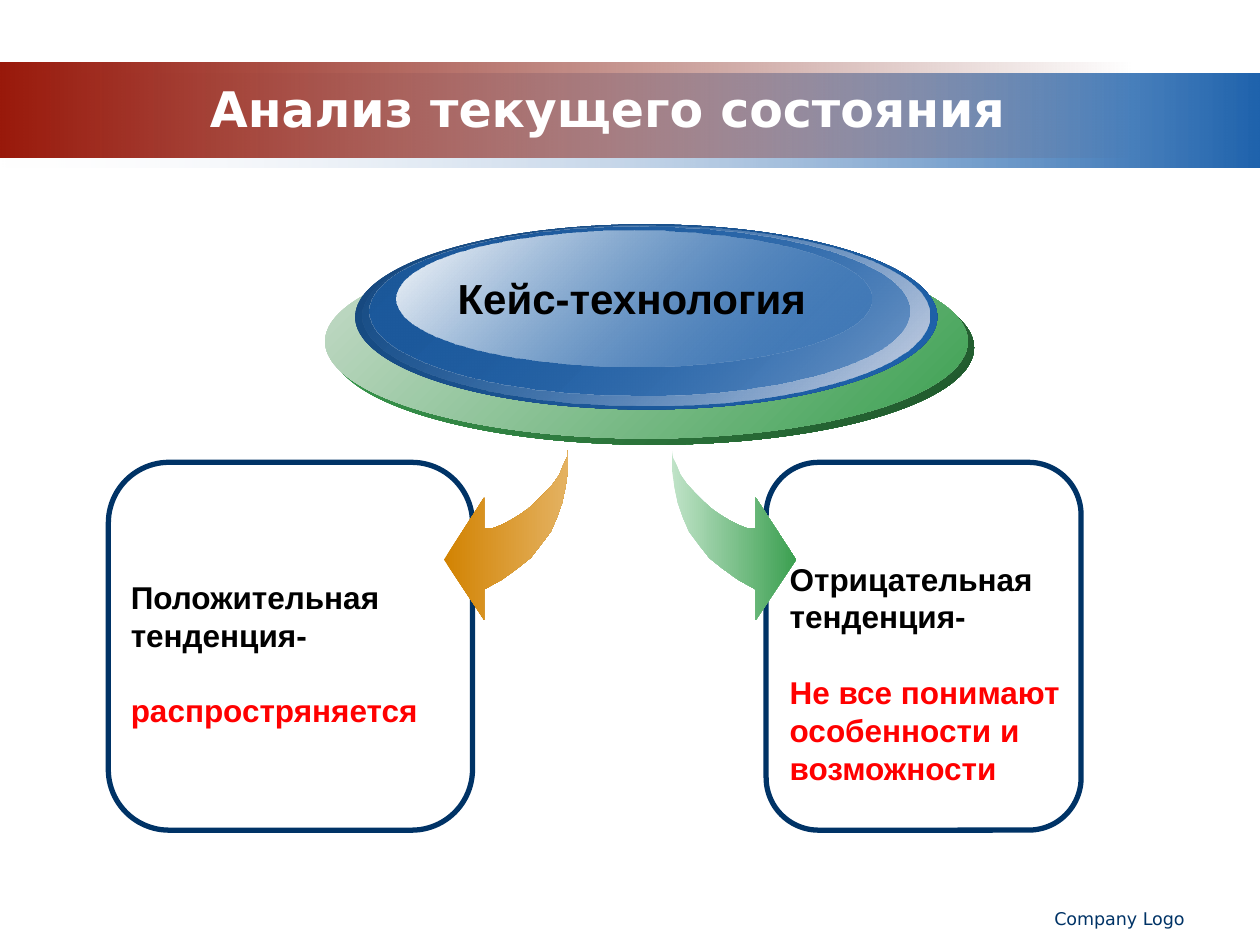
from lxml import etree
from pptx import Presentation
from pptx.dml.color import RGBColor
from pptx.enum import shapes, text
from pptx.oxml import ns
from pptx.util import Pt

NAVY = RGBColor(0x00, 0x33, 0x66)
WHITE = RGBColor(0xFF, 0xFF, 0xFF)
BLACK = RGBColor(0x00, 0x00, 0x00)
RED = RGBColor(0xFF, 0x00, 0x00)
BLUE = RGBColor(0x1F, 0x63, 0xAD)
DARK_BLUE = RGBColor(0x16, 0x47, 0x7C)
MID_BLUE = RGBColor(0x1C, 0x59, 0x9C)
PALE_BLUE = RGBColor(0xD4, 0xD9, 0xE7)
MIST = RGBColor(0xF1, 0xF2, 0xF7)
BRICK = RGBColor(0x99, 0x19, 0x0B)
DARK_BRICK = RGBColor(0x6D, 0x12, 0x08)
GREEN = RGBColor(0x3C, 0xA0, 0x51)
DARK_GREEN = RGBColor(0x1F, 0x55, 0x2B)
PALE_GREEN = RGBColor(0xC8, 0xDC, 0xCB)
MINT = RGBColor(0xC0, 0xE3, 0xC8)
ORANGE = RGBColor(0xD2, 0x83, 0x02)
PALE_ORANGE = RGBColor(0xE4, 0xB2, 0x62)

RECT = shapes.MSO_SHAPE.RECTANGLE
OVAL = shapes.MSO_SHAPE.OVAL

# Left, top, width, height, then start and end colour with opacity in percent
BANDS = [
    (0, 41.8, 720, 54, (MIST, 0), (BLUE, 100)),
    (0, 36, 648, 54, (BRICK, 100), (DARK_BRICK, 0)),
]
DISCS = [
    (189.4, 143.3, 367.2, 110.9, (GREEN, 100), (DARK_GREEN, 100)),
    (185.8, 139.7, 367.2, 110.9, (PALE_GREEN, 100), (GREEN, 100)),
    (203, 128.2, 332.6, 105.8, (DARK_BLUE, 100), (BLUE, 100)),
    (207.4, 128.9, 324, 103, (BLUE, 0), (PALE_BLUE, 100)),
    (211, 129.6, 308.9, 96.5, (MID_BLUE, 100), (BLUE, 48)),
    (226.8, 131.8, 271.4, 77.8, (WHITE, 100), (BLUE, 38)),
]

# Outline of a curved arrow: distance outward and downward from its tail
ARROW = [
    (0, 0), (0, 11), (1.5, 21.5), (3.5, 31), (6.5, 39.5), (10, 47.5), (16, 55.5),
    (21.5, 62.5), (29, 68.5), (38, 75), (48, 80.5), (48, 98), (71, 63.5), (48, 28),
    (48, 45.5), (43, 45.5), (39, 44), (33, 41), (28, 38), (23, 34.5), (18, 30),
    (13, 25), (8.5, 20), (5, 15), (3, 10), (0.7, 5),
]
ARROW_TOP = 256.3


def fill_gradient(shape, start, end, angle):
    """Fill from start to end, each (colour, opacity), turning clockwise."""
    shape.shadow.inherit = False
    shape.line.fill.background()
    shape.fill.gradient()
    gradient = shape._element.spPr.find(ns.qn("a:gradFill"))
    for child in list(gradient):
        gradient.remove(child)
    stops = etree.SubElement(gradient, ns.qn("a:gsLst"))
    for position, (color, opacity) in ((0, start), (100, end)):
        stop = etree.SubElement(stops, ns.qn("a:gs"), pos=str(position * 1000))
        tint = etree.SubElement(stop, ns.qn("a:srgbClr"), val=str(color))
        if opacity < 100:
            etree.SubElement(tint, ns.qn("a:alpha"), val=str(opacity * 1000))
    etree.SubElement(gradient, ns.qn("a:lin"), ang=str(angle * 60000), scaled="0")


def add_gradient_shape(slide, kind, left, top, width, height, start, end, angle):
    shape = slide.shapes.add_shape(kind, Pt(left), Pt(top), Pt(width), Pt(height))
    fill_gradient(shape, start, end, angle)


def add_card(slide, left, width):
    card = slide.shapes.add_shape(shapes.MSO_SHAPE.ROUNDED_RECTANGLE,
                                  Pt(left), Pt(264.2), Pt(width), Pt(210.2))
    card.shadow.inherit = False
    card.fill.background()
    card.line.color.rgb = NAVY
    card.line.width = Pt(3)


def add_arrow(slide, tail, direction, start, end):
    """Draw the curved arrow outward: direction is -1 to the left, 1 to the right."""
    outline = [(Pt(tail + direction * out), Pt(ARROW_TOP + down)) for out, down in ARROW]
    builder = slide.shapes.build_freeform(*outline[0])
    builder.add_line_segments(outline[1:], close=True)
    fill_gradient(builder.convert_to_shape(), (start, 100), (end, 100), 0)


def add_text(slide, box, lines, size, font="Arial", bold=True,
             align=text.PP_ALIGN.LEFT, wrap=True, gap=0):
    """Write (wording, colour) lines, with a gap above every line but the first."""
    frame = slide.shapes.add_textbox(*map(Pt, box)).text_frame
    frame.word_wrap = wrap
    frame.vertical_anchor = text.MSO_ANCHOR.MIDDLE
    frame.text = "\n".join(wording for wording, _ in lines)
    for index, (paragraph, (_, color)) in enumerate(zip(frame.paragraphs, lines)):
        paragraph.alignment = align
        paragraph.space_before = Pt(gap if index else 0)
        for run in paragraph.runs:
            run.font.name = font
            run.font.size = Pt(size)
            run.font.bold = bold
            run.font.color.rgb = color


def main():
    deck = Presentation()
    deck.slide_width, deck.slide_height = Pt(720), Pt(540)
    slide = deck.slides.add_slide(deck.slide_layouts[6])

    for band in BANDS:
        add_gradient_shape(slide, RECT, *band, angle=0)
    add_text(slide, (455.8, 514, 228.2, 21.6), [("Company Logo", NAVY)], 10,
             font="DejaVu Sans", bold=False, align=text.PP_ALIGN.RIGHT)
    add_text(slide, (56.2, 39.6, 581.8, 44.6), [("Анализ текущего состояния", WHITE)], 28,
             font="DejaVu Sans", align=text.PP_ALIGN.CENTER)

    add_card(slide, 437.8, 180)
    add_card(slide, 61.9, 208.1)
    add_text(slide, (67.7, 326.2, 185, 94.3),
             [("Положительная тенденция-", BLACK), ("распростряняется", RED)], 18, gap=21.6)
    add_arrow(slide, 324.7, -1, ORANGE, PALE_ORANGE)
    add_arrow(slide, 383.8, 1, MINT, GREEN)

    for disc in DISCS:
        add_gradient_shape(slide, OVAL, *disc, angle=45)
    add_text(slide, (253.4, 151.9, 215.3, 36), [("Кейс-технология", BLACK)], 24,
             align=text.PP_ALIGN.CENTER, wrap=False)
    add_text(slide, (444.2, 315.4, 185, 138.2),
             [("Отрицательная тенденция-", BLACK),
              ("Не все понимают особенности и возможности", RED)], 18, gap=21.6)

    deck.save("out.pptx")


if __name__ == "__main__":
    main()
